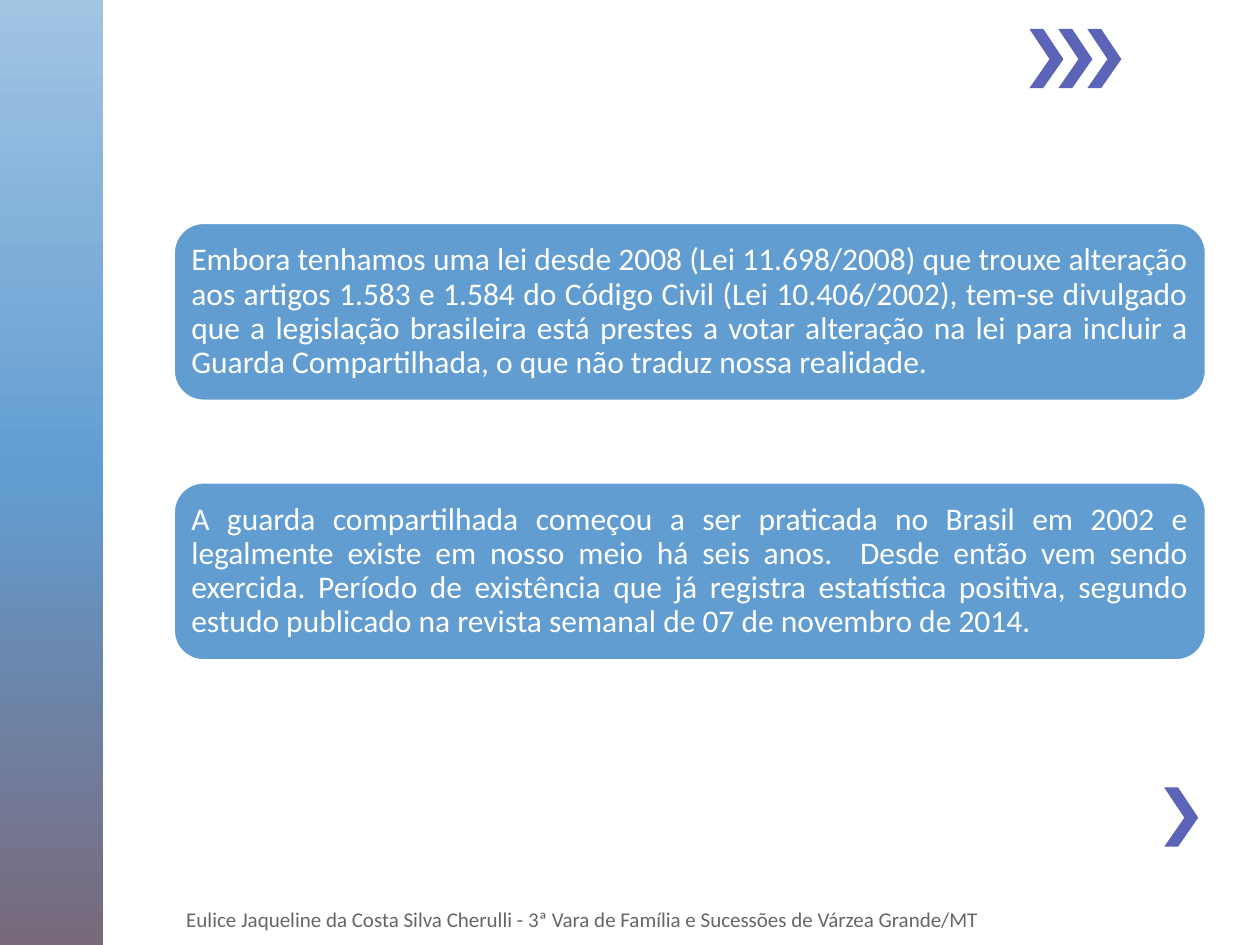
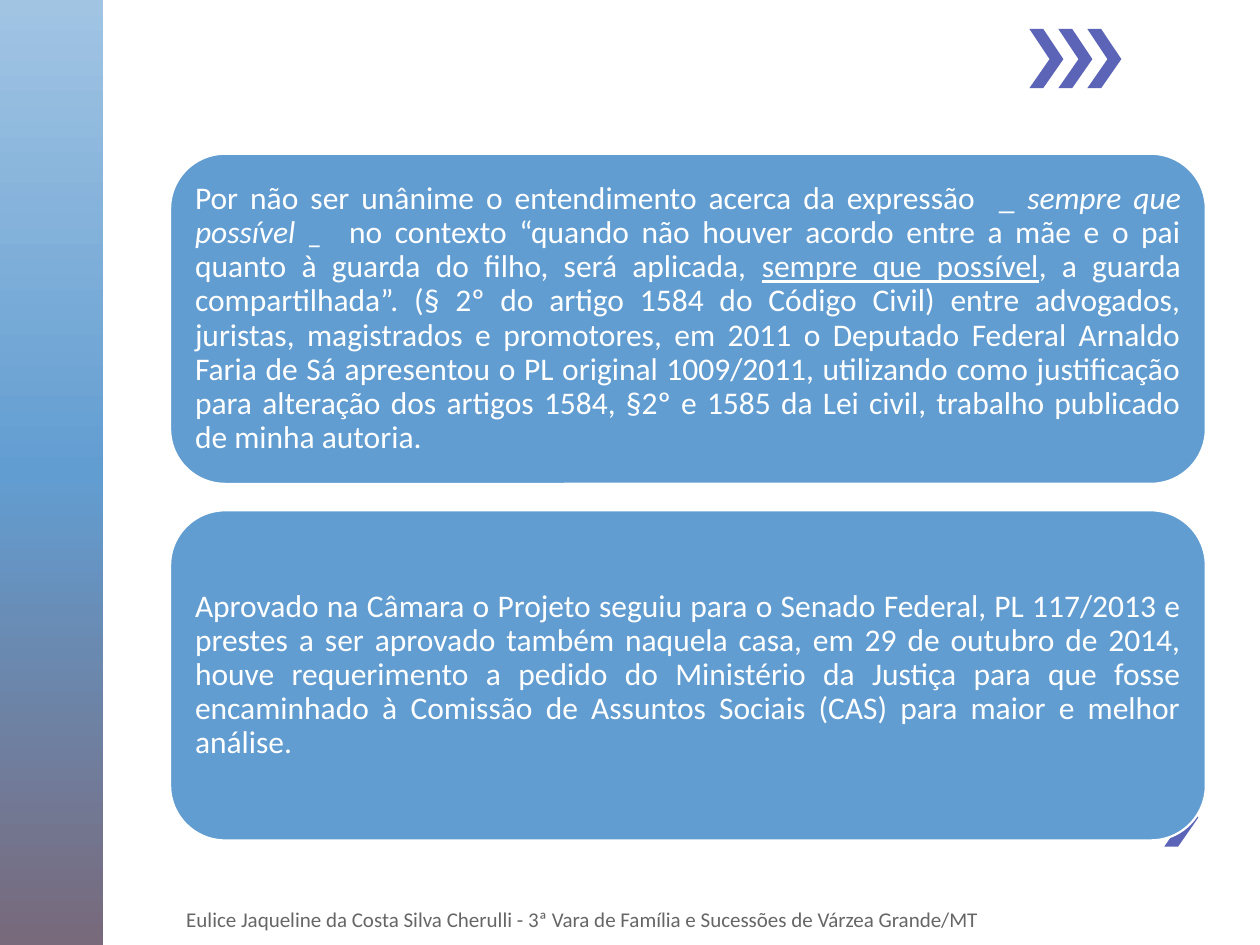
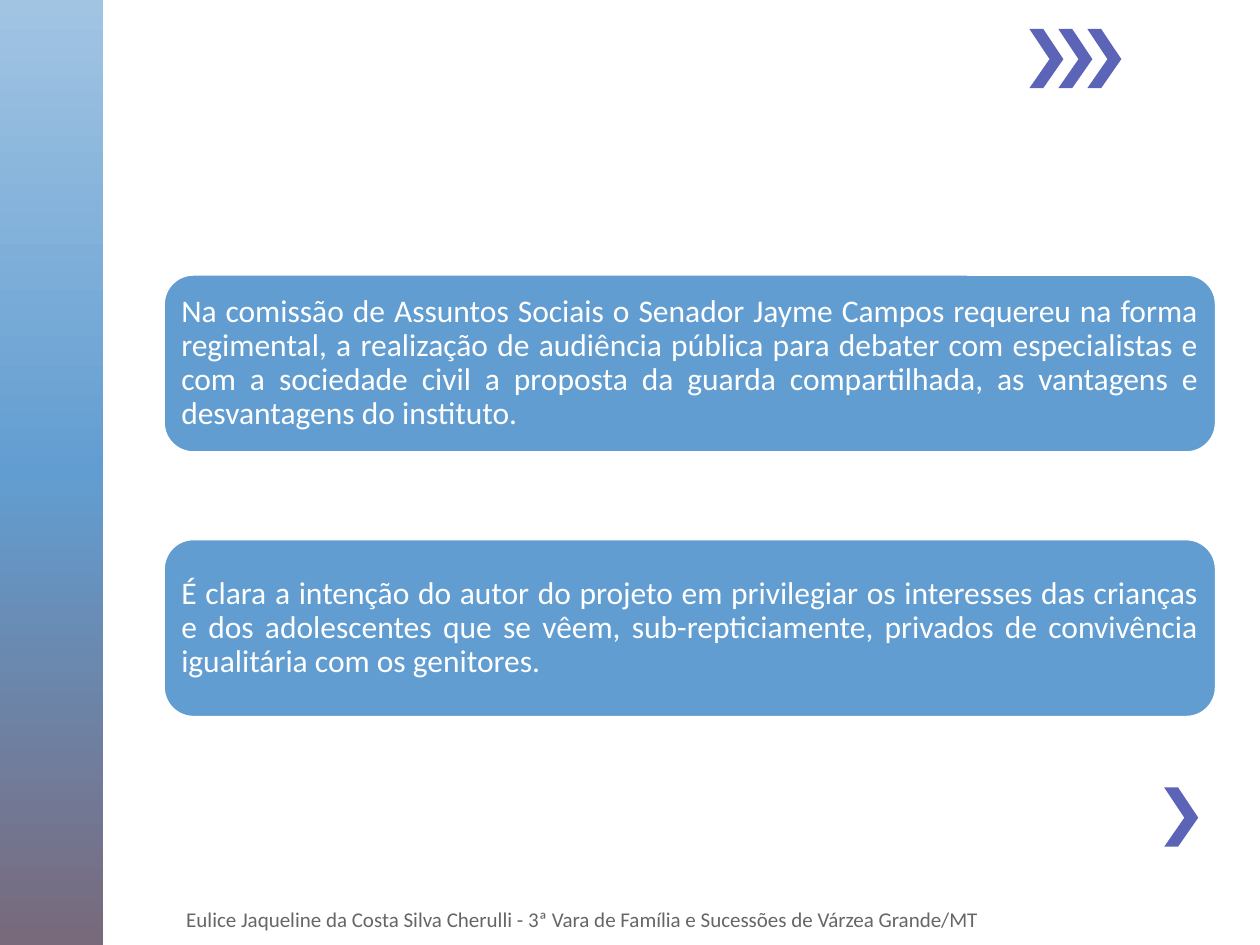
from copy import deepcopy
from dataclasses import dataclass

from pptx import Presentation
from pptx.dml.color import RGBColor
from pptx.enum.shapes import MSO_SHAPE
from pptx.enum.text import MSO_ANCHOR, PP_ALIGN
from pptx.oxml.ns import qn
from pptx.slide import Slide
from pptx.text.text import TextFrame
from pptx.util import Inches, Pt

COLORS = {
    "band_top": "A1C4E3",
    "blue": "629DD1",
    "band_bottom": "78697B",
    "chevron": "5C64B7",
    "white": "FFFFFF",
    "footer": "666666",
}
FONT = "Calibri"
BLANK_LAYOUT = 6
FOOTER = "Eulice Jaqueline da Costa Silva Cherulli - 3ª Vara de Família e Sucessões de Várzea Grande/MT"
BAND_STOPS = [(0, "band_top"), (0.5, "blue"), (1, "band_bottom")]
CHEVRON_OUTLINE = [(0.11, 0), (0, 0), (0.16, 0.24), (0, 0.47), (0.11, 0.47), (0.27, 0.24)]
CHEVRON_POSITIONS = [(9.24, 6.25)] + [(8.17 + 0.23 * index, 0.23) for index in range(3)]
CARD_FRAME = {
    "word_wrap": True,
    "vertical_anchor": MSO_ANCHOR.MIDDLE,
    "margin_left": Inches(0.07),
    "margin_top": Inches(0.07),
    "margin_right": Inches(0.07),
    "margin_bottom": Inches(0.07),
}
CARD_PARAGRAPH = {"alignment": PP_ALIGN.JUSTIFY, "line_spacing": 0.9}
FOOTER_FRAME = {"word_wrap": True, "vertical_anchor": MSO_ANCHOR.MIDDLE}
FOOTER_PARAGRAPH = {"alignment": PP_ALIGN.LEFT}


@dataclass(frozen=True)
class TextRun:
    text: str
    italic: bool = False
    underline: bool = False


@dataclass(frozen=True)
class CardStack:
    """Equal cards placed one below the other at a fixed vertical step."""
    left: float
    top: float
    width: float
    height: float
    step: float
    cards: list[list[TextRun]]


STACKS = [
    CardStack(1.38, 1.77, 8.19, 1.41, 2.06, [
        [TextRun("Embora tenhamos uma lei desde 2008 (Lei 11.698/2008) que trouxe alteração aos "
                 "artigos 1.583 e 1.584 do Código Civil (Lei 10.406/2002), tem-se divulgado que a "
                 "legislação brasileira está prestes a votar alteração na lei para incluir a "
                 "Guarda Compartilhada, o que não traduz nossa realidade.")],
        [TextRun("A guarda compartilhada começou a ser praticada no Brasil em 2002 e legalmente "
                 "existe em nosso meio há seis anos.  Desde então vem sendo exercida. Período de "
                 "existência que já registra estatística positiva, segundo estudo publicado na "
                 "revista semanal de 07 de novembro de 2014.")],
    ]),
    CardStack(1.35, 1.22, 8.22, 2.62, 2.83, [
        [TextRun("Por não ser unânime o entendimento acerca da expressão  _ "),
         TextRun("sempre que possível _ ", italic=True),
         TextRun(" no contexto “quando não houver acordo entre a mãe e o pai quanto à guarda do "
                 "filho, será aplicada, "),
         TextRun("sempre que possível", underline=True),
         TextRun(", a guarda compartilhada”. (§ 2º do artigo 1584 do Código Civil) entre "
                 "advogados, juristas, magistrados e promotores, em 2011 o Deputado Federal "
                 "Arnaldo Faria de Sá apresentou o PL original 1009/2011, utilizando como "
                 "justificação para alteração dos artigos 1584, §2º e 1585 da Lei civil, trabalho "
                 "publicado de minha autoria. ")],
        [TextRun("Aprovado na Câmara o Projeto seguiu para o Senado Federal, PL 117/2013 e prestes "
                 "a ser aprovado também naquela casa, em 29 de outubro de 2014, houve requerimento "
                 "a pedido do Ministério da Justiça para que fosse encaminhado à Comissão de "
                 "Assuntos Sociais (CAS) para maior e melhor análise. ")],
    ]),
    CardStack(1.3, 2.18, 8.35, 1.41, 2.1, [
        [TextRun("Na comissão de Assuntos Sociais o Senador Jayme Campos requereu na forma "
                 "regimental, a realização de audiência pública para debater com especialistas e "
                 "com a sociedade civil a proposta da guarda compartilhada, as vantagens e "
                 "desvantagens do instituto.")],
        [TextRun("É clara a intenção do autor do projeto em privilegiar os interesses das crianças "
                 "e dos adolescentes que se vêem, sub-repticiamente, privados de convivência "
                 "igualitária com os genitores.")],
    ]),
]


def color(name: str) -> RGBColor:
    return RGBColor.from_string(COLORS[name])


def apply_format(target: object, values: dict) -> None:
    for name, value in values.items():
        setattr(target, name, value)


def write_text(frame: TextFrame, runs: list[TextRun], size: int, color_name: str,
               frame_format: dict, paragraph_format: dict) -> None:
    apply_format(frame, frame_format)
    paragraph = frame.paragraphs[0]
    apply_format(paragraph, paragraph_format)
    for text_run in runs:
        run = paragraph.add_run()
        run.text = text_run.text
        apply_format(run.font, {"name": FONT, "size": Pt(size), "italic": text_run.italic,
                                "underline": text_run.underline})
        run.font.color.rgb = color(color_name)


def add_band(slide: Slide) -> None:
    band = slide.shapes.add_shape(MSO_SHAPE.RECTANGLE, 0, 0, Inches(0.82), Inches(7.5))
    band.shadow.inherit = False
    band.line.fill.background()
    band.fill.gradient()
    band.fill.gradient_angle = 270
    stop_list = next(band.element.iter(qn("a:gsLst")))
    stop_list.append(deepcopy(stop_list[-1]))
    for stop, (position, color_name) in zip(band.fill.gradient_stops, BAND_STOPS):
        stop.position = position
        stop.color.rgb = color(color_name)


def add_chevron(slide: Slide, left: float, top: float) -> None:
    points = [(Inches(left + x), Inches(top + y)) for x, y in CHEVRON_OUTLINE]
    builder = slide.shapes.build_freeform(*points[0])
    builder.add_line_segments(points[1:], close=True)
    chevron = builder.convert_to_shape()
    chevron.shadow.inherit = False
    chevron.fill.solid()
    chevron.fill.fore_color.rgb = color("chevron")
    chevron.line.fill.background()


def add_footer(slide: Slide) -> None:
    footer = slide.shapes.add_textbox(Inches(1.38), Inches(7.17), Inches(7.83), Inches(0.25))
    write_text(footer.text_frame, [TextRun(FOOTER)], 12, "footer", FOOTER_FRAME, FOOTER_PARAGRAPH)


def add_cards(slide: Slide, stack: CardStack) -> None:
    for index, runs in enumerate(stack.cards):
        card = slide.shapes.add_shape(
            MSO_SHAPE.ROUNDED_RECTANGLE, Inches(stack.left),
            Inches(stack.top + index * stack.step), Inches(stack.width), Inches(stack.height))
        card.shadow.inherit = False
        card.fill.solid()
        card.fill.fore_color.rgb = color("blue")
        card.line.color.rgb = color("white")
        card.line.width = Pt(1.25)
        write_text(card.text_frame, runs, 18, "white", CARD_FRAME, CARD_PARAGRAPH)


def main() -> None:
    presentation = Presentation()
    presentation.slide_width = Inches(10)
    presentation.slide_height = Inches(7.5)
    for stack in STACKS:
        slide = presentation.slides.add_slide(presentation.slide_layouts[BLANK_LAYOUT])
        add_band(slide)
        for left, top in CHEVRON_POSITIONS:
            add_chevron(slide, left, top)
        add_cards(slide, stack)
        add_footer(slide)
    presentation.save("out.pptx")


if __name__ == "__main__":
    main()
